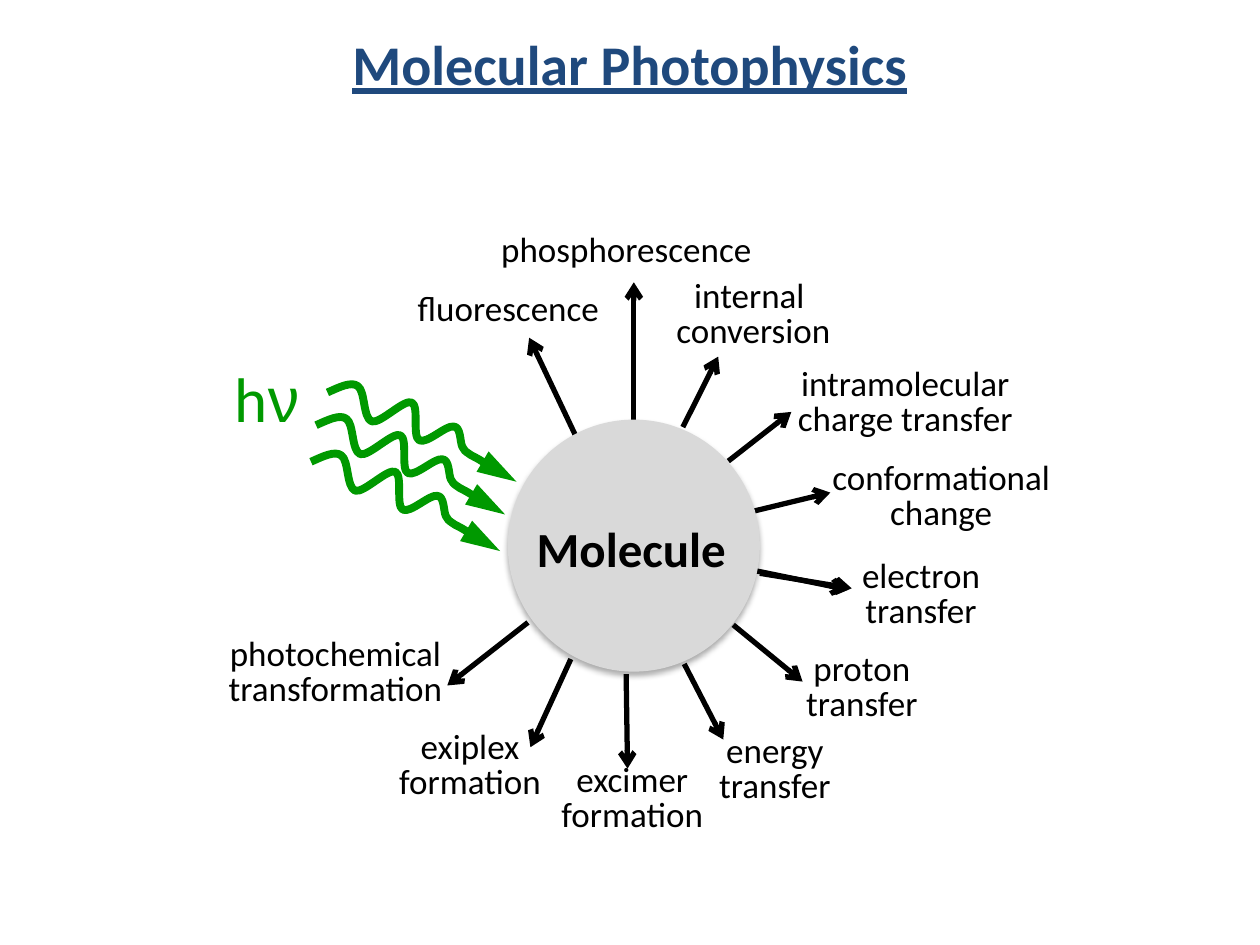
from lxml import etree
from pptx import Presentation
from pptx import util as u
from pptx.dml.color import RGBColor
from pptx.enum import shapes, text
from pptx.oxml import parse_xml
from pptx.oxml.ns import qn

COLORS = {"ink": "000000", "light": "009900", "molecule": "D9D9D9", "title": "1F497D"}

deck = Presentation()
deck.slide_width, deck.slide_height = u.Pt(720), u.Pt(540)
page = deck.slides.add_slide(deck.slide_layouts[6])


def add_text(words, left, top, width, height, size, color="ink", spacing=None):
    box = page.shapes.add_textbox(u.Pt(left), u.Pt(top), u.Pt(width), u.Pt(height))
    box.text_frame.word_wrap = True
    box.text_frame.text = words
    for para in box.text_frame.paragraphs:
        para.alignment = text.PP_ALIGN.CENTER
        if spacing:
            para.line_spacing = u.Pt(spacing)
        for span in para.runs:
            span.font.name = "Calibri"
            span.font.size = u.Pt(size)
            span.font.color.rgb = RGBColor.from_string(COLORS[color])
    return box


def style_arrow(shape, color, width, end, **head):
    shape.line.color.rgb = RGBColor.from_string(COLORS[color])
    shape.line.width = u.Pt(width)
    line = shape.line._get_or_add_ln()
    etree.SubElement(line, qn(f"a:{end}"), **head)


arrows = [
    (362.2, 240.5, 362.2, 161.3),
    (390.2, 244.1, 410.4, 203.8),
    (416.2, 263.5, 452.2, 235.4),
    (429.8, 292.3, 474.5, 281.5),
    (432, 326.2, 484.6, 337),
    (335.5, 262.8, 302.4, 193),
    (301.7, 355.7, 255.6, 391.7),
    (326.2, 376.6, 303.1, 427),
    (357.8, 385.2, 358.6, 439.2),
    (391, 379.4, 413.3, 422.6),
    (419, 357.1, 458.6, 389.5),
    (434.2, 327.6, 486.7, 336.2),
]
for ends in arrows:
    arrow = page.shapes.add_connector(
        shapes.MSO_CONNECTOR.STRAIGHT, *[u.Pt(value) for value in ends]
    )
    style_arrow(arrow, "ink", 3, "tailEnd", type="arrow")
    etree.SubElement(arrow._element.spPr, qn("a:effectLst"))

processes = [
    ("phosphorescence", 274.4, 130.7, 167, 28),
    ("fluorescence", 207, 164.2, 167, 28),
    ("internal \nconversion", 365.7, 156.5, 129.6, 48),
    ("intramolecular charge transfer", 433.8, 206.9, 167, 48),
    ("conformational change", 454.3, 260.6, 167, 48),
    ("electron transfer", 462.2, 316.8, 128.2, 48),
    ("proton transfer", 428.4, 370.1, 128.2, 48),
    ("energy transfer", 378.7, 416.9, 128.2, 48),
    ("excimer formation", 297.2, 433.4, 128.2, 48),
    ("exiplex formation", 204.5, 414.7, 128.2, 48),
    ("photochemical transformation", 103.5, 361.4, 176.4, 48),
]
for process in processes:
    add_text(*process, size=20, spacing=20)

photon = add_text("h", 111.2, 225.2, 82.8, 40.3, 36, "light", 20)
nu = photon.text_frame.paragraphs[0].add_run()
nu.text = "ν"
nu.font.name = "Arial"
nu.font.size = u.Pt(36)
nu.font.color.rgb = RGBColor.from_string(COLORS["light"])

wave_start = (-59.3, -9.5)
wave_curves = [
    ((-59.3, -9.5), (-36, -6), (-29.6, -5.5)),
    ((-23.5, -4.2), (-26.1, -4.7), (-23, -2.9)),
    ((-20.6, -0.8), (-17.9, 7.5), (-13.9, 5.8)),
    ((-9.7, 4.9), (-3.8, -9.2), (1, -9)),
    ((5.8, -8.6), (8.5, 9), (13.3, 9.3)),
    ((18.1, 9.7), (25.2, -8.9), (30.4, -9.5)),
    ((35.9, -9.4), (40.3, 5.1), (45.4, 6.1)),
    ((49.9, 7.4), (55.1, 1.3), (60, -3.9)),
]
wave_points = [wave_start] + [point for curve in wave_curves for point in curve]

for center_x, center_y in [(243.4, 243.4), (236.9, 262.1), (234, 283)]:
    points = [(u.Pt(center_x + x), u.Pt(center_y + y)) for x, y in wave_points]
    builder = page.shapes.build_freeform(*points[0])
    builder.add_line_segments(points[1:], close=False)
    wave = builder.convert_to_shape()
    segments = list(wave._element.iter(qn("a:lnTo")))
    outline = segments[0].getparent()
    for index in range(0, len(segments), 3):
        curve = etree.SubElement(outline, qn("a:cubicBezTo"))
        for segment in segments[index:index + 3]:
            curve.append(segment[0])
            outline.remove(segment)
    wave.rotation = 202.6
    wave.fill.background()
    wave.shadow.inherit = False
    style_arrow(wave, "light", 4.5, "headEnd", type="triangle", w="med", len="lg")

molecule = page.shapes.add_shape(
    shapes.MSO_SHAPE.OVAL, u.Pt(290.2), u.Pt(239.8), u.Pt(144), u.Pt(144)
)
molecule.fill.solid()
molecule.fill.fore_color.rgb = RGBColor.from_string(COLORS["molecule"])
molecule.line.fill.background()
molecule._element.spPr.append(parse_xml(
    '<a:effectLst xmlns:a="http://schemas.openxmlformats.org/drawingml/2006/main">'
    f'<a:outerShdw blurRad="{u.Pt(3.5)}" dist="{u.Pt(2.2)}" dir="5400000" rotWithShape="0">'
    f'<a:srgbClr val="{COLORS["ink"]}"><a:alpha val="32000"/></a:srgbClr>'
    "</a:outerShdw></a:effectLst>"
))

name = add_text("Molecule", 296.6, 293, 128.2, 41, 28)
name.text_frame.paragraphs[0].runs[0].font.bold = True

title = add_text("Molecular Photophysics", 36, 0, 648, 72, 32, "title")
title.text_frame.vertical_anchor = text.MSO_ANCHOR.MIDDLE
title_font = title.text_frame.paragraphs[0].runs[0].font
title_font.bold = True
title_font.underline = True

deck.save("out.pptx")
